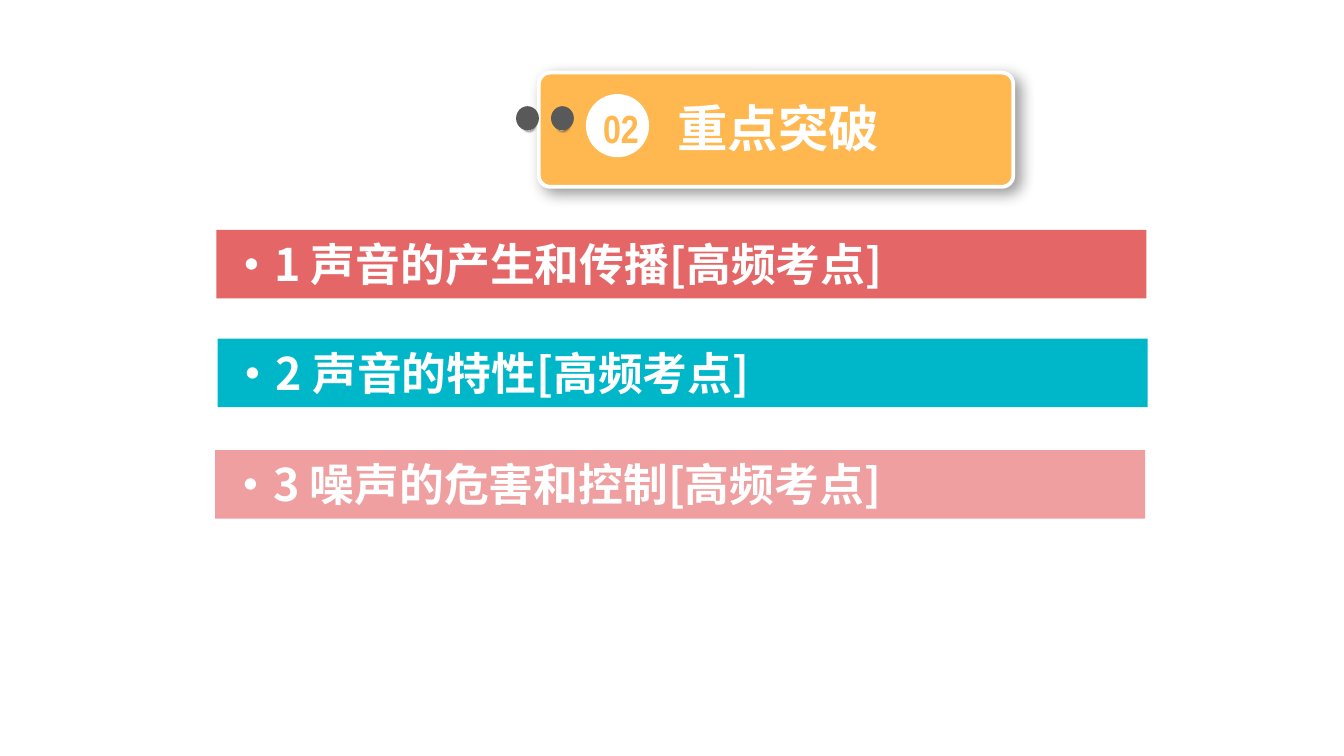
from dataclasses import dataclass

import pptx
import pptx.dml.color
import pptx.enum.shapes
import pptx.enum.text
import pptx.oxml
import pptx.oxml.ns
import pptx.util

SHAPES = pptx.enum.shapes.MSO_SHAPE
ALIGN = pptx.enum.text.PP_ALIGN
ANCHOR = pptx.enum.text.MSO_ANCHOR

# A 16:9 slide, 100 square grid cells wide
SLIDE_WIDTH = pptx.util.Inches(10)
SLIDE_HEIGHT = SLIDE_WIDTH * 9 // 16
CELL = SLIDE_WIDTH / 100


@dataclass(frozen=True)
class Theme:
    white: str = "FFFFFF"
    amber: str = "FFB850"
    red: str = "E56666"
    teal: str = "00B7CA"
    pink: str = "EF9F9F"
    pin: str = "595959"
    steel: tuple = ((0, "FFFFFF"), (17, "A6A6A6"), (35, "F2F2F2"),
                    (55, "A6A6A6"), (75, "F2F2F2"), (100, "A6A6A6"))
    chinese_font: str = "Noto Sans CJK SC"
    number_font: str = "Arial Narrow"
    title_size: float = 27
    number_size: float = 21
    topic_size: float = 24


@dataclass(frozen=True)
class Box:
    column: float
    row: float
    columns: float
    rows: float

    def lengths(self) -> list[int]:
        return [round(value * CELL) for value in
                (self.column, self.row, self.columns, self.rows)]


@dataclass(frozen=True)
class Topic:
    text: str
    column: float
    row: float
    color: str


THEME = Theme()
TOPICS = (
    Topic("·1 声音的产生和传播[高频考点]", 16.1, 17.1, THEME.red),
    Topic("·2 声音的特性[高频考点]", 16.2, 25.2, THEME.teal),
    Topic("·3 噪声的危害和控制[高频考点]", 16, 33.5, THEME.pink),
)
# Each pin: left of its hole and left of its head
PINS = ((41.3, 41), (38.8, 38.4))


def rgb(color: str) -> pptx.dml.color.RGBColor:
    return pptx.dml.color.RGBColor.from_string(color)


def draw_shape(slide, kind, box: Box, color: str):
    shape = slide.shapes.add_shape(kind, *box.lengths())
    shape.shadow.inherit = False
    shape.fill.solid()
    shape.fill.fore_color.rgb = rgb(color)
    shape.line.fill.background()
    return shape


def add_shadow(shape, blur: float, distance: float) -> None:
    effects = shape._element.spPr.find(pptx.oxml.ns.qn("a:effectLst"))
    effects.append(pptx.oxml.parse_xml(
        f'<a:outerShdw {pptx.oxml.ns.nsdecls("a")} blurRad="{pptx.util.Pt(blur)}" '
        f'dist="{pptx.util.Pt(distance)}" dir="2700000" algn="tl" rotWithShape="0">'
        '<a:srgbClr val="000000"><a:alpha val="40000"/></a:srgbClr></a:outerShdw>'))


def fill_steel(shape) -> None:
    shape.fill.gradient()
    shape.fill.gradient_angle = 315  # counter-clockwise, so 45 degrees downwards
    stops = shape._element.spPr.find(
        f'{pptx.oxml.ns.qn("a:gradFill")}/{pptx.oxml.ns.qn("a:gsLst")}')
    for stop in list(stops):
        stops.remove(stop)
    for position, color in THEME.steel:
        stops.append(pptx.oxml.parse_xml(
            f'<a:gs {pptx.oxml.ns.nsdecls("a")} pos="{position * 1000}">'
            f'<a:srgbClr val="{color}"/></a:gs>'))


def write(shape, text: str, font: str, size: float, color: str, align) -> None:
    frame = shape.text_frame
    frame.word_wrap = True
    frame.auto_size = pptx.enum.text.MSO_AUTO_SIZE.NONE
    frame.vertical_anchor = ANCHOR.TOP
    frame.margin_left = frame.margin_right = round(CELL)
    frame.margin_top = frame.margin_bottom = round(CELL / 2)
    paragraph = frame.paragraphs[0]
    paragraph.alignment = align
    run = paragraph.add_run()
    run.text = text
    run.font.name = font
    run.font.size = pptx.util.Pt(size)
    run.font.bold = True
    run.font.color.rgb = rgb(color)
    run._r.get_or_add_rPr().append(pptx.oxml.parse_xml(
        f'<a:ea {pptx.oxml.ns.nsdecls("a")} typeface="{font}"/>'))


def draw_pin(slide, hole_column: float, head_column: float) -> None:
    hole = draw_shape(slide, SHAPES.OVAL, Box(hole_column, 8.7, 1, 1), THEME.white)
    hole.rotation = 270
    fill_steel(hole)
    add_shadow(hole, 1, 1)
    draw_shape(slide, SHAPES.OVAL, Box(head_column, 7.9, 1.7, 1.8), THEME.pin)


def draw_header(slide) -> None:
    # Card with two pins
    card = draw_shape(slide, SHAPES.ROUNDED_RECTANGLE,
                      Box(40.1, 5.4, 35.3, 8.5), THEME.amber)
    card.adjustments[0] = 0.1
    card.line.color.rgb = rgb(THEME.white)
    card.line.width = pptx.util.Pt(2)
    add_shadow(card, 8, 4)
    for hole_column, head_column in PINS:
        draw_pin(slide, hole_column, head_column)

    # Title, raised above the card
    title = slide.shapes.title
    title.left, title.top, title.width, title.height = Box(45.5, 6.7, 24.8, 5.6).lengths()
    slide.shapes._spTree.append(title._element)
    write(title, "重点突破", THEME.chinese_font, THEME.title_size, THEME.white, ALIGN.CENTER)

    # Section number
    draw_shape(slide, SHAPES.OVAL, Box(43.6, 7, 4.7, 4.7), THEME.white)
    number = slide.shapes.add_textbox(*Box(43.4, 7.3, 5.6, 4.5).lengths())
    write(number, "02", THEME.number_font, THEME.number_size, THEME.amber, ALIGN.CENTER)


def draw_topic(slide, topic: Topic) -> None:
    bar = draw_shape(slide, SHAPES.RECTANGLE,
                     Box(topic.column, topic.row, 69.2, 5.1), topic.color)
    write(bar, topic.text, THEME.chinese_font, THEME.topic_size, THEME.white, ALIGN.LEFT)


def main() -> None:
    presentation = pptx.Presentation()
    presentation.slide_width = SLIDE_WIDTH
    presentation.slide_height = SLIDE_HEIGHT
    title_only = presentation.slide_layouts[5]
    slide = presentation.slides.add_slide(title_only)
    draw_header(slide)
    for topic in TOPICS:
        draw_topic(slide, topic)
    presentation.save("out.pptx")


if __name__ == "__main__":
    main()
